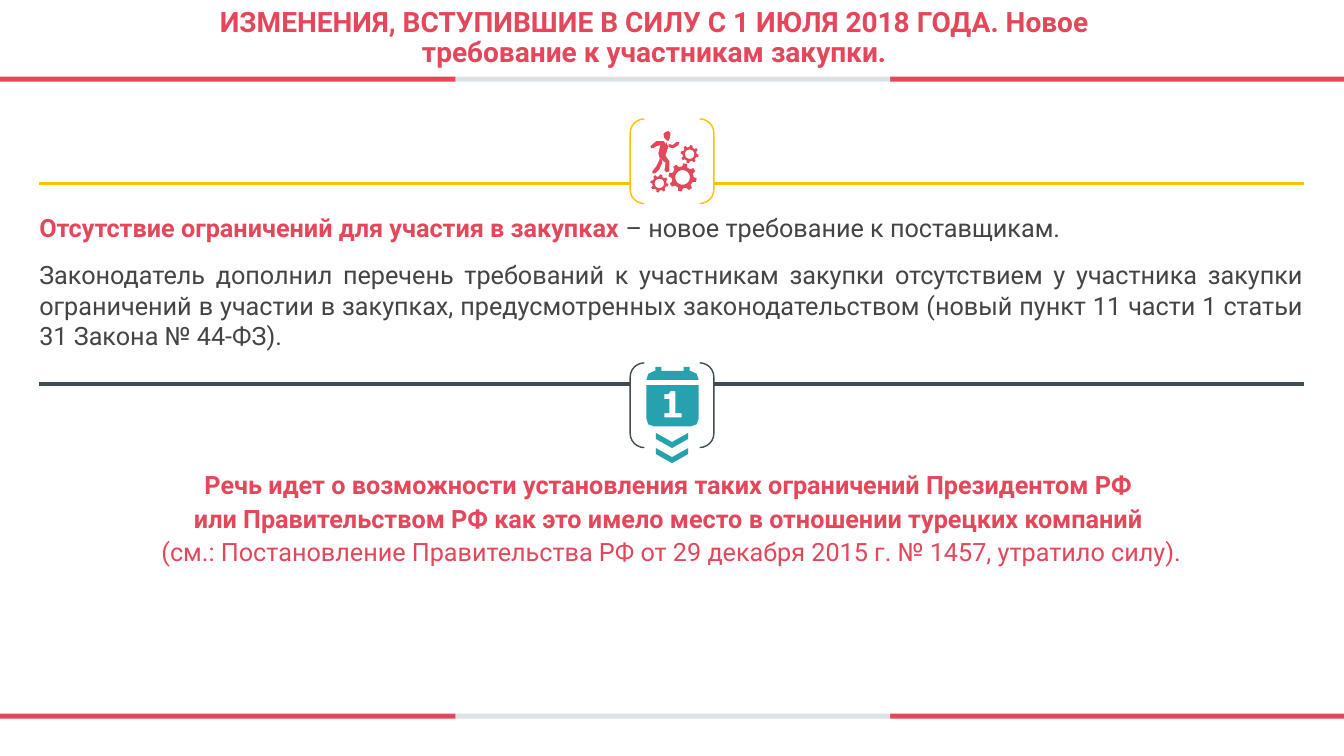
from math import cos, pi, sin

from lxml import etree
from pptx import Presentation
from pptx import util as u
from pptx.dml.color import RGBColor
from pptx.enum import shapes, text
from pptx.oxml import ns

RED = RGBColor(0xE4, 0x46, 0x5A)
GREY = RGBColor(0xDB, 0xE1, 0xE4)
BODY = RGBColor(0x44, 0x44, 0x44)
SLATE = RGBColor(0x3F, 0x4C, 0x54)
AMBER = RGBColor(0xFF, 0xC0, 0x00)
TEAL = RGBColor(0x27, 0xA1, 0xAE)
WHITE = RGBColor(0xFF, 0xFF, 0xFF)
FONT = "Roboto"
MSO = shapes.MSO_SHAPE
ALIGN = text.PP_ALIGN
ANCHOR = text.MSO_ANCHOR

prs = Presentation()
prs.slide_width = u.Inches(13.33)
prs.slide_height = u.Inches(7.5)
s = prs.slides.add_slide(prs.slide_layouts[6])


def add_text(box, paragraphs, size, align, anchor, inset=(0, 0), spacing=1.0, after=0):
    tf = s.shapes.add_textbox(*map(u.Inches, box)).text_frame
    tf.word_wrap = True
    tf.vertical_anchor = anchor
    tf.margin_left = tf.margin_right = u.Inches(inset[0])
    tf.margin_top = tf.margin_bottom = u.Inches(inset[1])
    for i, runs in enumerate(paragraphs):
        p = tf.add_paragraph() if i else tf.paragraphs[0]
        p.alignment = align
        p.line_spacing = spacing
        p.space_after = u.Pt(after)
        for j, (words, color, bold) in enumerate(runs):
            if j and runs[j - 1][0].endswith("РФ ") or words.startswith("(см."):
                p.add_line_break()
            r = p.add_run()
            r.text = words
            r.font.name = FONT
            r.font.size = u.Pt(size)
            r.font.bold = bold
            r.font.color.rgb = color


def add_outline(contours, color):
    points = [[(u.Inches(x), u.Inches(y)) for x, y in c] for c in contours]
    fb = s.shapes.build_freeform(*points[0][0])
    for i, contour in enumerate(points):
        if i:
            fb.move_to(*contour[0])
        fb.add_line_segments(contour[1:], close=True)
    sp = fb.convert_to_shape()
    sp.shadow.inherit = False
    sp.fill.solid()
    sp.fill.fore_color.rgb = color
    sp.line.fill.background()


for y, color in ((1.82, AMBER), (3.81, SLATE)):
    rule = s.shapes.add_connector(
        shapes.MSO_CONNECTOR.STRAIGHT,
        u.Inches(0.39), u.Inches(y), u.Inches(12.93), u.Inches(y))
    rule.line.color.rgb = color
    rule.line.width = u.Pt(2.25)
    etree.SubElement(rule._element.spPr, ns.qn("a:effectLst"))

parts = []
for y in (0.76, 7.08):
    for x, width, color in ((0, 4.52, RED), (8.83, 4.5, RED), (4.52, 4.31, GREY)):
        parts.append((MSO.RECTANGLE, (x, y, width, 0.05), 0, None, color, None))
for y, color in ((1.18, AMBER), (3.6, SLATE)):
    parts.append((MSO.ROUNDED_RECTANGLE, (6.25, y + 0.01, 0.83, 0.82), 0, None, WHITE, None))
    for x, turn in ((6.25, 180), (6.94, 0)):
        parts.append((MSO.RIGHT_BRACKET, (x, y, 0.14, 0.84), turn, 1, None, color))
for y in (4.21, 4.36):
    parts.append((MSO.CHEVRON, (6.59, y, 0.15, 0.32), 90, 0.6, TEAL, None))

for kind, box, turn, adjust, fill, line in parts:
    sp = s.shapes.add_shape(kind, *map(u.Inches, box))
    sp.shadow.inherit = False
    sp.rotation = turn
    if adjust:
        sp.adjustments[0] = adjust
    if fill:
        sp.fill.solid()
        sp.fill.fore_color.rgb = fill
    else:
        sp.fill.background()
    if line:
        sp.line.color.rgb = line
        sp.line.width = u.Pt(1)
    else:
        sp.line.fill.background()

calendar_top = [
    (6.41, 3.77), (6.43, 3.71), (6.49, 3.68), (6.5, 3.68), (6.5, 3.64), (6.56, 3.64),
    (6.56, 3.68), (6.78, 3.68), (6.78, 3.64), (6.84, 3.64), (6.84, 3.68), (6.85, 3.68),
    (6.91, 3.71), (6.93, 3.77)]
calendar_page = [
    (6.41, 3.82), (6.41, 4.15), (6.43, 4.21), (6.49, 4.23), (6.85, 4.23), (6.91, 4.21),
    (6.93, 4.15), (6.93, 3.82)]
digit_one = [
    (6.59, 4.1), (6.64, 4.1), (6.64, 3.96), (6.59, 3.96), (6.59, 3.91), (6.63, 3.91),
    (6.65, 3.88), (6.7, 3.88), (6.7, 4.1), (6.76, 4.1), (6.76, 4.14), (6.59, 4.14)]
add_outline([calendar_top], TEAL)
add_outline([calendar_page, digit_one], TEAL)

runner_body = [
    (6.48, 1.47), (6.51, 1.45), (6.55, 1.44), (6.53, 1.52), (6.54, 1.56), (6.58, 1.6),
    (6.6, 1.61), (6.6, 1.63), (6.59, 1.69), (6.61, 1.71), (6.64, 1.7), (6.64, 1.6),
    (6.61, 1.56), (6.6, 1.54), (6.63, 1.45), (6.63, 1.42), (6.62, 1.45), (6.61, 1.41),
    (6.6, 1.44), (6.6, 1.42), (6.58, 1.4), (6.51, 1.4), (6.45, 1.45), (6.46, 1.47)]
runner_leg = [
    (6.54, 1.57), (6.54, 1.59), (6.51, 1.65), (6.47, 1.7), (6.47, 1.72), (6.5, 1.72),
    (6.54, 1.68), (6.57, 1.61), (6.56, 1.58)]
runner_arm = [
    (6.63, 1.46), (6.67, 1.47), (6.68, 1.47), (6.73, 1.44), (6.74, 1.41), (6.71, 1.41),
    (6.67, 1.44), (6.64, 1.43)]
runner_head = [
    (6.61, 1.39), (6.63, 1.4), (6.64, 1.38), (6.65, 1.34), (6.65, 1.32), (6.63, 1.3),
    (6.6, 1.31), (6.58, 1.33), (6.59, 1.37)]
for limb in (runner_body, runner_leg, runner_arm, runner_head):
    add_outline([limb], RED)

TEETH = 8
for x, y, radius in ((6.77, 1.76, 0.14), (6.84, 1.53, 0.09), (6.54, 1.82, 0.09)):
    rim, hole = [], []
    for tooth in range(TEETH):
        for step, reach in ((-0.3, 0.78), (-0.16, 1), (0.16, 1), (0.3, 0.78)):
            angle = 2 * pi * (tooth + 0.25 + step) / TEETH
            rim.append((x + radius * reach * cos(angle), y + radius * reach * sin(angle)))
    for step in range(24):
        angle = -2 * pi * step / 24
        hole.append((x + radius * 0.52 * cos(angle), y + radius * 0.52 * sin(angle)))
    add_outline([rim, hole], RED)

add_text(
    (1.97, 0, 9.04, 0.76),
    [[("ИЗМЕНЕНИЯ, ВСТУПИВШИЕ В СИЛУ С 1 ИЮЛЯ 2018 ГОДА. Новое требование к участникам закупки.", RED, True)]],
    20, ALIGN.CENTER, ANCHOR.MIDDLE, inset=(0.1, 0.05), spacing=0.9)
add_text(
    (0.39, 2.11, 12.54, 1.66),
    [[("Отсутствие ограничений для участия в закупках ", RED, True),
      ("– новое требование к поставщикам.", BODY, False)],
     [("Законодатель дополнил перечень требований к участникам закупки отсутствием у участника "
       "закупки ограничений в участии в закупках, предусмотренных законодательством "
       "(новый пункт 11 части 1 статьи 31 Закона № 44-ФЗ). ", BODY, False)]],
    18, ALIGN.JUSTIFY, ANCHOR.TOP, after=12)
add_text(
    (0.39, 4.57, 12.54, 1.11),
    [[("Речь идет о возможности установления таких ограничений Президентом РФ ", RED, True),
      ("или Правительством РФ как это имело место в отношении турецких компаний ", RED, True),
      ("(см.: Постановление Правительства РФ от 29 декабря 2015 г. № 1457, утратило силу).", RED, False)]],
    18, ALIGN.CENTER, ANCHOR.MIDDLE, spacing=1.1)

prs.save("out.pptx")
